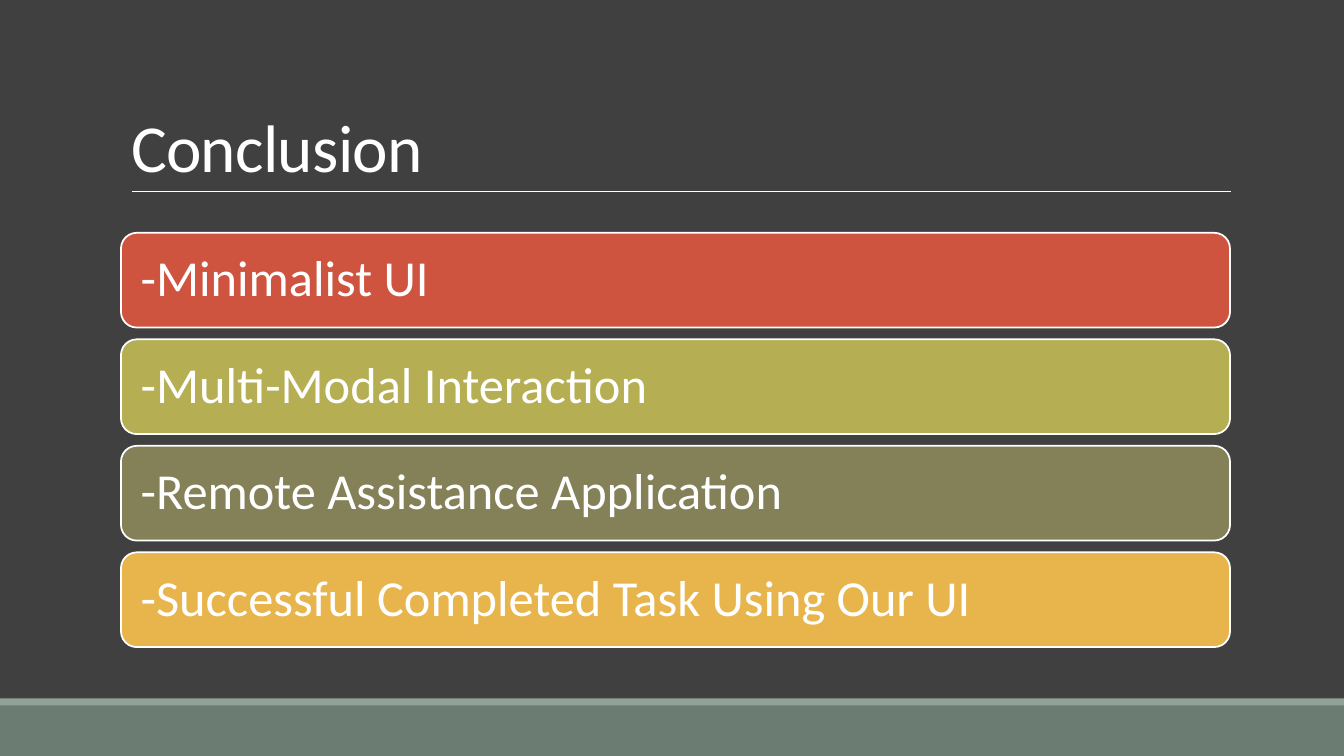
"""Build the Conclusion slide: a ruled title, four takeaway bars and a footer band."""
from dataclasses import dataclass

from pptx import Presentation
from pptx import util as u
from pptx.dml.color import RGBColor
from pptx.enum import shapes, text
from pptx.oxml.ns import qn
from lxml import etree


@dataclass(frozen=True)
class Theme:
    backdrop: str = "404040"
    ink: str = "FFFFFF"
    footer: str = "6B7D72"
    footer_edge: str = "93A299"
    font: str = "Calibri"
    title_size: float = 48
    bar_size: float = 36
    rule_width: float = 0.5
    outline_width: float = 1.25


theme = Theme()
WIDTH, HEIGHT = 13.33, 7.5
LEFT, COLUMN = 1.2, 11
BAR_TOP, BAR_HEIGHT, BAR_PITCH = 2.31, 0.94, 3.17 / 3

takeaways = [
    ("-Minimalist UI", "CF543F"),
    ("-Multi-Modal Interaction", "B5AE53"),
    ("-Remote Assistance Application", "848058"),
    ("-Successful Completed Task Using Our UI", "E8B54D"),
]


def add_block(kind, left, top, width, height, fill):
    block = slide.shapes.add_shape(kind, *map(u.Inches, (left, top, width, height)))
    block.shadow.inherit = False
    block.fill.solid()
    block.fill.fore_color.rgb = RGBColor.from_string(fill)
    block.line.fill.background()
    return block


def write(frame, wording, size, leading, frame_format):
    for name, value in frame_format.items():
        setattr(frame, name, value)
    paragraph = frame.paragraphs[0]
    paragraph.alignment = text.PP_ALIGN.LEFT
    paragraph.line_spacing = leading
    run = paragraph.add_run()
    run.text = wording
    for name, value in {"name": theme.font, "size": u.Pt(size)}.items():
        setattr(run.font, name, value)
    run.font.color.rgb = RGBColor.from_string(theme.ink)
    return run


deck = Presentation()
deck.slide_width, deck.slide_height = u.Inches(WIDTH), u.Inches(HEIGHT)
slide = deck.slides.add_slide(deck.slide_layouts[5])
slide.background.fill.solid()
slide.background.fill.fore_color.rgb = RGBColor.from_string(theme.backdrop)

for top, height, fill in [(7, 0.5, theme.footer), (6.93, 0.07, theme.footer_edge)]:
    add_block(shapes.MSO_SHAPE.RECTANGLE, 0, top, WIDTH, height, fill)

rule = slide.shapes.add_connector(
    shapes.MSO_CONNECTOR.STRAIGHT, *map(u.Inches, (1.31, 1.9, 12.21, 1.9)))
rule.line.color.rgb = RGBColor.from_string(theme.ink)
rule.line.width = u.Pt(theme.rule_width)
etree.SubElement(rule._element.spPr, qn("a:effectLst"))

heading = slide.shapes.title
heading_box = {"left": LEFT, "top": 0.31, "width": COLUMN, "height": 1.59}
for name, value in heading_box.items():
    setattr(heading, name, u.Inches(value))
heading_run = write(heading.text_frame, "Conclusion", theme.title_size, 0.85, {
    "vertical_anchor": text.MSO_ANCHOR.BOTTOM,
    "auto_size": text.MSO_AUTO_SIZE.NONE,
    "word_wrap": True,
})
heading_run._r.get_or_add_rPr().set("spc", "-50")

bar_format = {"vertical_anchor": text.MSO_ANCHOR.MIDDLE, "word_wrap": True}
for side in ("left", "right", "top", "bottom"):
    bar_format[f"margin_{side}"] = u.Inches(0.15)

for row, (takeaway, fill) in enumerate(takeaways):
    bar = add_block(shapes.MSO_SHAPE.ROUNDED_RECTANGLE, LEFT,
                    BAR_TOP + row * BAR_PITCH, COLUMN, BAR_HEIGHT, fill)
    bar.line.color.rgb = RGBColor.from_string(theme.ink)
    bar.line.width = u.Pt(theme.outline_width)
    write(bar.text_frame, takeaway, theme.bar_size, 0.9, bar_format)

deck.save("out.pptx")
